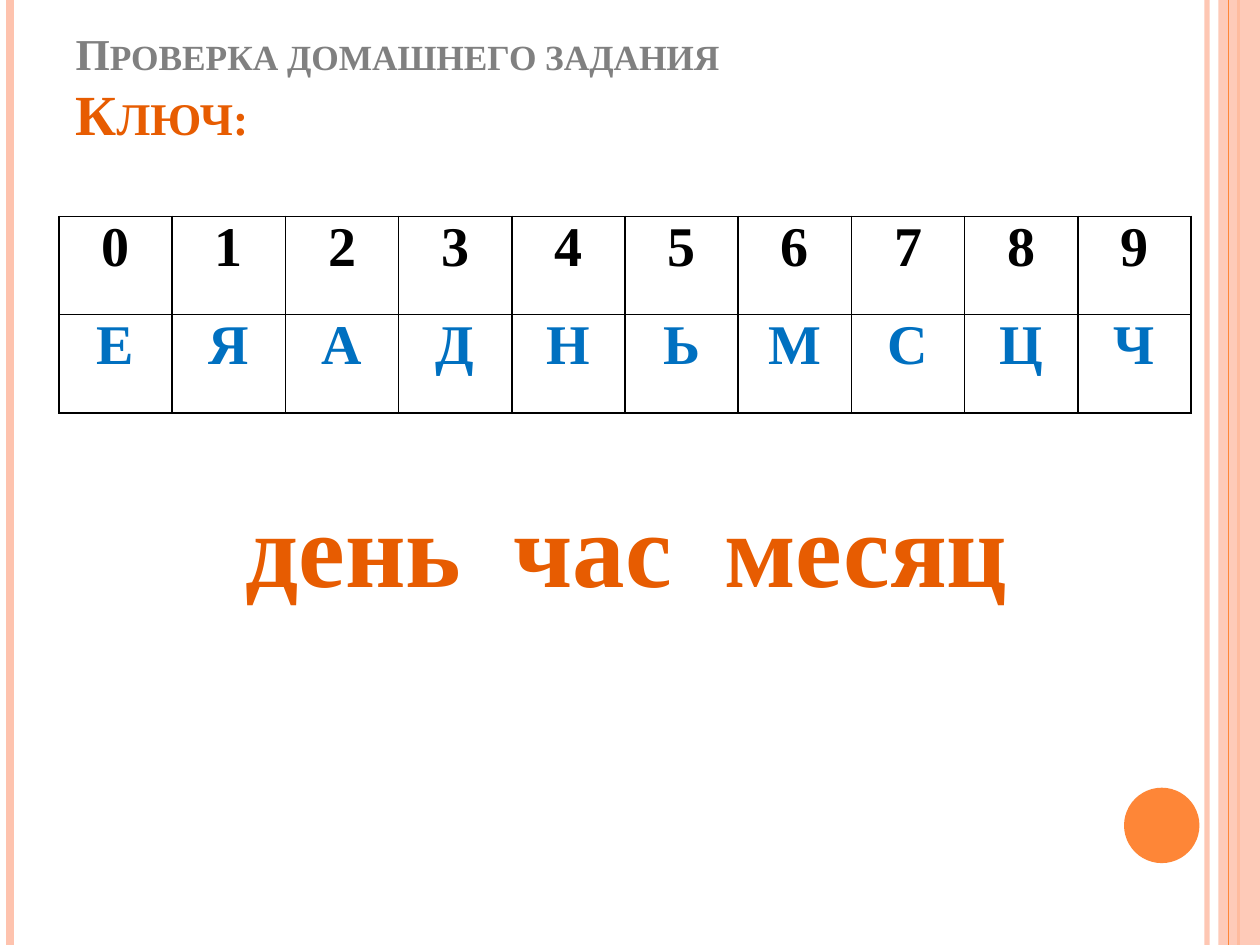
from dataclasses import dataclass

from lxml.etree import SubElement
from pptx import Presentation
from pptx.dml.color import RGBColor
from pptx.enum.shapes import MSO_CONNECTOR, MSO_SHAPE
from pptx.enum.text import MSO_ANCHOR, MSO_AUTO_SIZE, PP_ALIGN
from pptx.oxml.ns import qn
from pptx.util import Cm, Pt

FONT = "Times New Roman"
PEACH, ORANGE, RUST = "FEC3AE", "FE8637", "E75C01"
GREY, BLACK, BLUE = "808080", "000000", "0070C0"
PAGE_WIDTH, PAGE_HEIGHT = 25.4, 19.05


@dataclass
class Stripe:
    x: float
    width: float
    color: str
    opacity: int = 100


@dataclass
class KeyRow:
    symbols: str
    color: str


LINES_BEHIND_BAND = [Stripe(24.33, 3, PEACH, 93), Stripe(0.2, 4.5, PEACH),
                     Stripe(24.97, 1.5, ORANGE)]
LINE_OVER_BAND = Stripe(24.77, 0.75, ORANGE)
KEY_ROWS = [KeyRow("0123456789", BLACK), KeyRow("ЕЯАДНЬМСЦЧ", BLUE)]


def rgb(color: str) -> RGBColor:
    return RGBColor.from_string(color)


def set_opacity(properties, percent: int) -> None:
    color = next(properties.iter(qn("a:srgbClr")))
    SubElement(color, qn("a:alpha"), val=str(percent * 1000))


def draw_stripe(page, stripe: Stripe) -> None:
    line = page.shapes.add_connector(MSO_CONNECTOR.STRAIGHT, Cm(stripe.x), Cm(0),
                                     Cm(stripe.x), Cm(PAGE_HEIGHT))
    line.line.color.rgb = rgb(stripe.color)
    line.line.width = Pt(stripe.width)
    properties = line._element.spPr
    if stripe.opacity < 100:
        set_opacity(properties, stripe.opacity)
    SubElement(properties, qn("a:effectLst"))


def draw_shape(page, kind, left: float, top: float, width: float, height: float,
               color: str):
    shape = page.shapes.add_shape(kind, Cm(left), Cm(top), Cm(width), Cm(height))
    shape.shadow.inherit = False
    shape.fill.solid()
    shape.fill.fore_color.rgb = rgb(color)
    shape.line.fill.background()
    return shape


def place(box, left: float, top: float, width: float, height: float) -> None:
    box.left, box.top, box.width, box.height = map(Cm, (left, top, width, height))
    box.text_frame.word_wrap = True
    box.text_frame.auto_size = MSO_AUTO_SIZE.NONE


def write(para, text: str, size: float, color: str, align=PP_ALIGN.CENTER):
    para.text = text
    para.alignment = align
    font = para.font
    font.name, font.size, font.bold = FONT, Pt(size), True
    font.color.rgb = rgb(color)


def set_borders(cell) -> None:
    properties = cell._tc.get_or_add_tcPr()
    for index, side in enumerate(("a:lnL", "a:lnR", "a:lnT", "a:lnB")):
        border = properties.makeelement(qn(side), {"w": str(Pt(1))})
        fill = SubElement(border, qn("a:solidFill"))
        SubElement(fill, qn("a:srgbClr"), val=BLACK)
        properties.insert(index, border)


def draw_key_table(page) -> None:
    columns = len(KEY_ROWS[0].symbols)
    table = page.shapes.add_table(len(KEY_ROWS), columns, Cm(1.19), Cm(4.36),
                                  Cm(22.82), Cm(3.97)).table
    table.first_row = table.horz_banding = False
    for row, key_row in enumerate(KEY_ROWS):
        for column, symbol in enumerate(key_row.symbols):
            cell = table.cell(row, column)
            cell.margin_left = cell.margin_right = Cm(0.18)
            cell.margin_top = cell.margin_bottom = Cm(0)
            cell.fill.background()
            set_borders(cell)
            write(cell.text_frame.paragraphs[0], symbol, 32, key_row.color)


def fill_title(box) -> None:
    place(box, 1.27, 0.76, 20.75, 4.6)
    frame = box.text_frame
    frame.vertical_anchor = MSO_ANCHOR.BOTTOM
    frame.margin_top, frame.margin_bottom = Cm(0), Cm(2.39)
    heading, key = frame.paragraphs[0], frame.add_paragraph()
    write(heading, "Проверка домашнего задания", 25.2, GREY, PP_ALIGN.LEFT)
    write(key, "Ключ:", 32.4, RUST, PP_ALIGN.LEFT)
    for para in (heading, key):
        para.runs[0].font._element.set("cap", "small")


def fill_answer(box) -> None:
    place(box, 1.27, 4.45, 22.73, 13.54)
    box.text_frame.margin_top = Cm(5.28)
    para = box.text_frame.paragraphs[0]
    write(para, "день  час  месяц", 60, RUST)
    para.space_before = Pt(0)
    properties = para._p.get_or_add_pPr()
    properties.set("marL", "0")
    properties.set("indent", "0")
    bullet = properties.makeelement(qn("a:buNone"), {})
    properties.find(qn("a:defRPr")).addprevious(bullet)


def main() -> None:
    deck = Presentation()
    deck.slide_width, deck.slide_height = Cm(PAGE_WIDTH), Cm(PAGE_HEIGHT)
    page = deck.slides.add_slide(deck.slide_layouts[1])

    # Edge decoration
    for stripe in LINES_BEHIND_BAND:
        draw_stripe(page, stripe)
    band = draw_shape(page, MSO_SHAPE.RECTANGLE, 24.56, 0, 0.84, PAGE_HEIGHT, PEACH)
    set_opacity(band._element.spPr, 87)
    draw_stripe(page, LINE_OVER_BAND)
    draw_shape(page, MSO_SHAPE.OVAL, 22.66, 15.88, 1.52, 1.52, ORANGE)

    # Title, answer and cipher key
    fill_title(page.shapes.title)
    fill_answer(page.placeholders[1])
    draw_key_table(page)

    deck.save("out.pptx")


if __name__ == "__main__":
    main()
